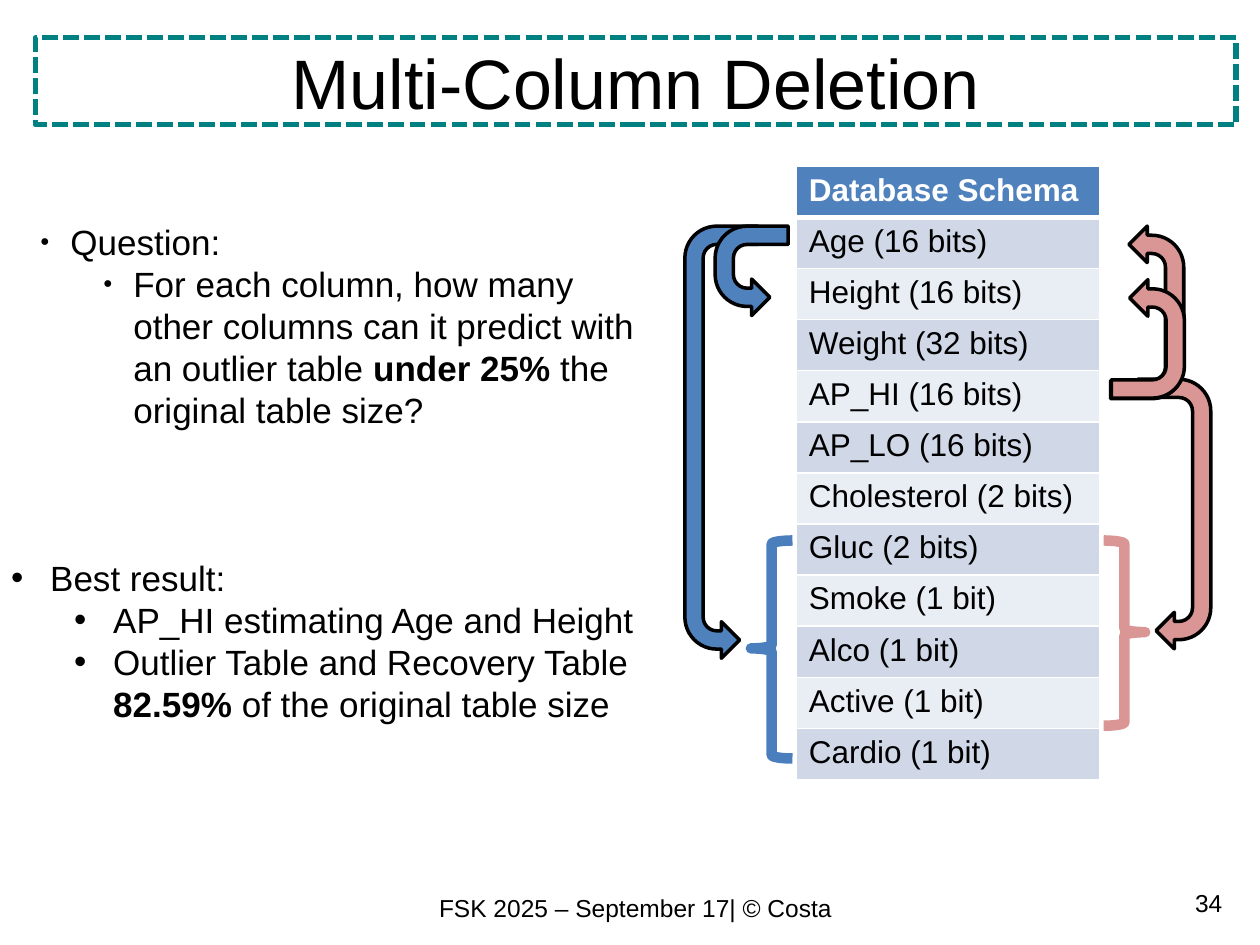
from lxml.etree import SubElement
from pptx import Presentation
from pptx.dml.color import RGBColor
from pptx.enum.dml import MSO_LINE
from pptx.enum.shapes import MSO_SHAPE as SHAPE
from pptx.enum.text import MSO_ANCHOR as ANCHOR, PP_ALIGN as ALIGN
from pptx.oxml.ns import qn
from pptx.util import Inches, Pt

FONT = "Arial"
BLACK, WHITE, TEAL = "000000", "FFFFFF", "008080"
BLUE, BRACE_BLUE, PINK = "4F81BD", "4B7EBC", "D99694"
BANDS = ("D0D8E8", "E9EDF4")
COLUMNS = [
    ("Age", "16 bits"), ("Height", "16 bits"), ("Weight", "32 bits"),
    ("AP_HI", "16 bits"), ("AP_LO", "16 bits"), ("Cholesterol", "2 bits"),
    ("Gluc", "2 bits"), ("Smoke", "1 bit"), ("Alco", "1 bit"),
    ("Active", "1 bit"), ("Cardio", "1 bit"),
]
SMALL_DOT, DOT = ("●", 45), ("•", 100)
BULLETS = [
    (0.47, -0.24, SMALL_DOT, 0, ["Question:"]),
    (0.97, -0.24, SMALL_DOT, 0,
     ["For each column, how many other columns can it predict with an outlier table ",
      "under 25%", " the original table size?"]),
    (0.31, -0.31, DOT, 72, ["Best result:"]),
    (0.81, -0.31, DOT, 0, ["AP_HI estimating Age and Height"]),
    (0.81, -0.31, DOT, 0,
     ["Outlier Table and Recovery Table ", "82.59%", " of the original table size"]),
]
ARROWS = [
    (4.01, 3.22, 3.43, BLUE, "H"),
    (5.61, 1.86, 0.71, BLUE, "H"),
    (8.25, 3.79, 2.14, PINK, "HV"),
    (8.42, 2.19, 1.37, PINK, "V"),
    (8.64, 2.4, 0.94, PINK, "V"),
]


def rgb(color):
    return RGBColor.from_string(color)


def style_font(font, size, color=BLACK, bold=False):
    font.name, font.size, font.bold = FONT, Pt(size), bold
    font.color.rgb = rgb(color)


def add_outline(slide, kind, box, line, width, fill=None, flip=""):
    sp = slide.shapes.add_shape(kind, *map(Inches, box))
    sp.shadow.inherit = False
    if fill:
        sp.fill.solid()
        sp.fill.fore_color.rgb = rgb(fill)
    else:
        sp.fill.background()
    sp.line.color.rgb = rgb(line)
    sp.line.width = Pt(width)
    for axis in flip:
        sp.element.spPr.find(qn("a:xfrm")).set(f"flip{axis}", "1")
    return sp


def write_line(tf, text, size, align):
    tf.word_wrap = True
    p = tf.paragraphs[0]
    p.text, p.alignment = text, align
    style_font(p.runs[0].font, size)


def add_text(slide, box, text, size, align):
    sp = slide.shapes.add_textbox(*map(Inches, box))
    write_line(sp.text_frame, text, size, align)


def add_title(slide, text):
    sp = add_outline(slide, SHAPE.RECTANGLE, (0.28, 0.3, 9.53, 0.69), TEAL, 3)
    sp.line.dash_style = MSO_LINE.SQUARE_DOT
    sp.line.fill.fore_color.rgb = rgb(TEAL)
    sp.line._get_or_add_ln().find(qn("a:prstDash")).set("val", "sysDash")
    sp.text_frame.vertical_anchor = ANCHOR.MIDDLE
    write_line(sp.text_frame, text, 40, ALIGN.CENTER)


def set_bullet(p, left, hanging, char, percent):
    pPr = p._p.get_or_add_pPr()
    pPr.set("marL", str(Inches(left)))
    pPr.set("indent", str(Inches(hanging)))
    SubElement(SubElement(pPr, qn("a:buClr")), qn("a:srgbClr"), val=BLACK)
    SubElement(pPr, qn("a:buSzPct"), val=str(percent * 1000))
    SubElement(pPr, qn("a:buFont"), typeface=FONT)
    SubElement(pPr, qn("a:buChar"), char=char)


def add_bullets(slide, box, items):
    tf = slide.shapes.add_textbox(*map(Inches, box)).text_frame
    tf.word_wrap = True
    for i, (left, hanging, (char, percent), before, parts) in enumerate(items):
        p = tf.add_paragraph() if i else tf.paragraphs[0]
        set_bullet(p, left, hanging, char, percent)
        p.line_spacing, p.space_before = Pt(24), Pt(before)
        for j, part in enumerate(parts):
            r = p.add_run()
            r.text = part
            style_font(r.font, 20, bold=j == 1)


def set_borders(cell, top, bottom):
    tcPr = cell._tc.get_or_add_tcPr()
    for i, (side, width) in enumerate(zip("LRTB", (1, 1, top, bottom))):
        ln = tcPr.makeelement(qn(f"a:ln{side}"), {"w": str(Pt(width))})
        SubElement(SubElement(ln, qn("a:solidFill")), qn("a:srgbClr"), val=WHITE)
        tcPr.insert(i, ln)


def add_schema(slide, box):
    rows = ["Database Schema"] + [f"{name} ({size})" for name, size in COLUMNS]
    table = slide.shapes.add_table(len(rows), 1, *map(Inches, box)).table
    for i, text in enumerate(rows):
        cell = table.cell(i, 0)
        header = i == 0
        cell.text = text
        cell.fill.solid()
        cell.fill.fore_color.rgb = rgb(BLUE if header else BANDS[(i - 1) % 2])
        style_font(cell.text_frame.paragraphs[0].runs[0].font, 18,
                   WHITE if header else BLACK, header)
        set_borders(cell, 3 if i == 1 else 1, 3 if header else 1)


def add_brace(slide, box, color, flip=""):
    sp = add_outline(slide, SHAPE.LEFT_BRACE, box, color, 6, flip=flip)
    sp.adjustments[0], sp.adjustments[1] = 0.083, 0.495


def add_uturn(slide, left, top, length, color, flip):
    sp = add_outline(slide, SHAPE.U_TURN_ARROW, (left, top, length, 0.58),
                     BLACK, 2, color, flip)
    sp.rotation = 270


def main():
    prs = Presentation()
    prs.slide_width, prs.slide_height = Inches(10), Inches(7.5)
    s = prs.slides.add_slide(prs.slide_layouts[6])
    add_text(s, (0.28, 7.04, 9.53, 0.34), "FSK 2025 – September 17| © Costa",
             14, ALIGN.CENTER)
    add_title(s, "Multi-Column Deletion")
    add_schema(s, (6.32, 1.32, 2.41, 4.87))
    add_bullets(s, (-0.01, 1.7, 5.34, 4.14), BULLETS)
    add_brace(s, (5.96, 4.29, 0.33, 1.73), BRACE_BLUE)
    add_brace(s, (8.76, 4.29, 0.33, 1.47), PINK, "H")
    for arrow in ARROWS:
        add_uturn(s, *arrow)
    add_text(s, (8.62, 7, 1.18, 0.4), "34", 14, ALIGN.RIGHT)
    prs.save("out.pptx")


if __name__ == "__main__":
    main()
